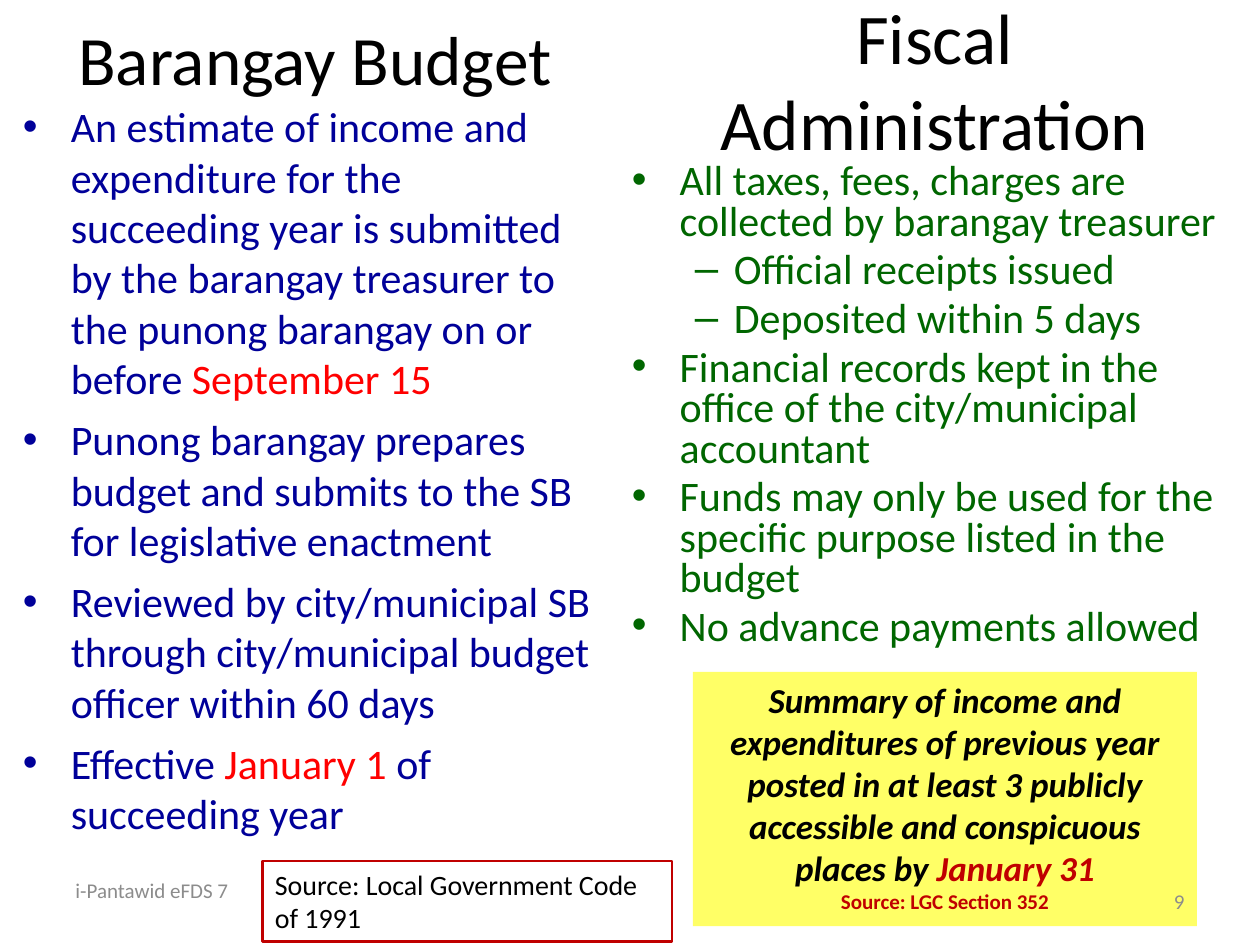
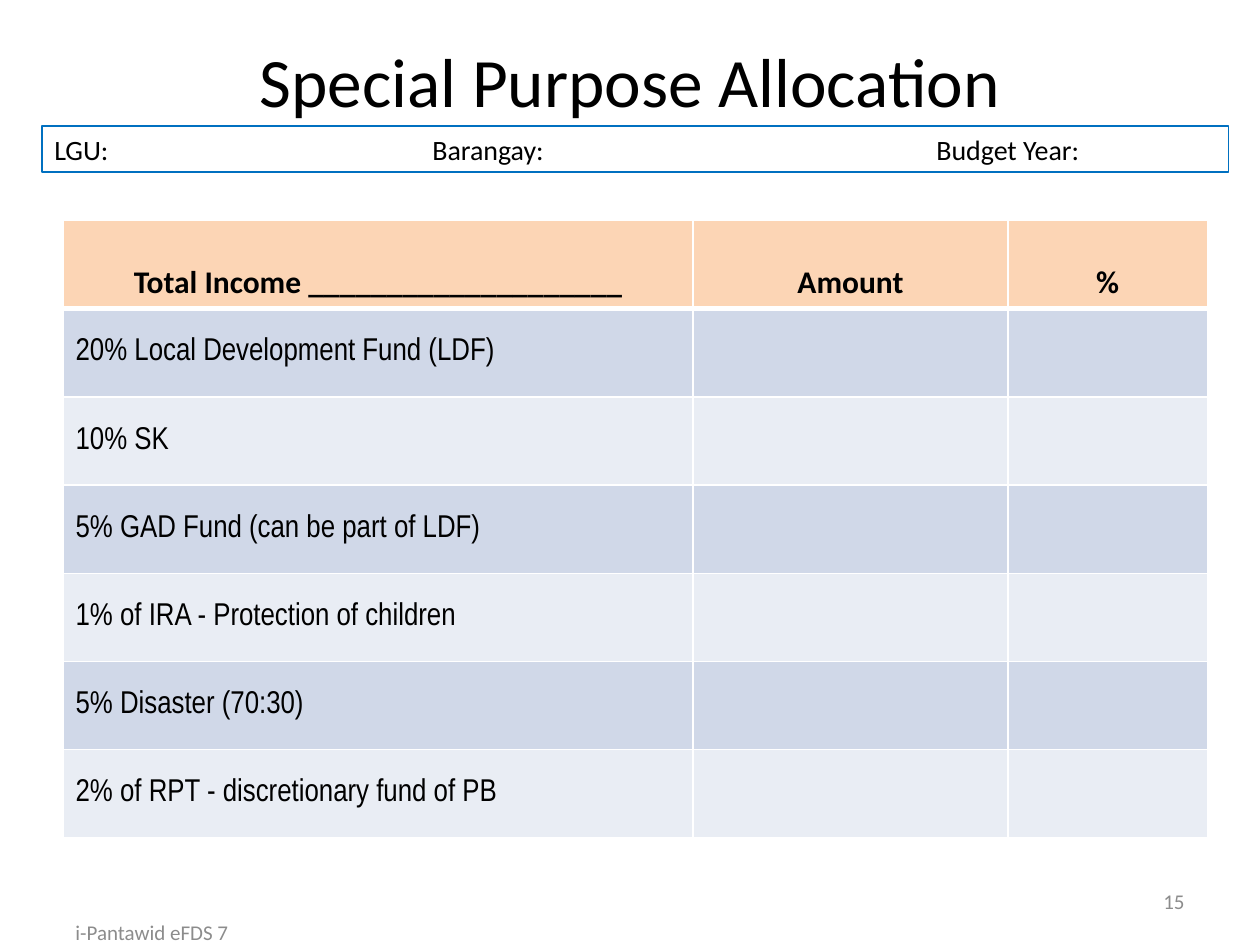
from dataclasses import dataclass
from typing import NamedTuple

from lxml import etree
from pptx import Presentation
from pptx.dml.color import RGBColor
from pptx.enum.shapes import MSO_SHAPE
from pptx.enum.text import MSO_ANCHOR, MSO_AUTO_SIZE, PP_ALIGN
from pptx.oxml.ns import qn
from pptx.util import Emu, Inches, Pt

RECT = MSO_SHAPE.RECTANGLE
TOP, MIDDLE, BOTTOM = MSO_ANCHOR.TOP, MSO_ANCHOR.MIDDLE, MSO_ANCHOR.BOTTOM
LEFT, CENTER, RIGHT = PP_ALIGN.LEFT, PP_ALIGN.CENTER, PP_ALIGN.RIGHT

BLACK = RGBColor(0x00, 0x00, 0x00)
WHITE = RGBColor(0xFF, 0xFF, 0xFF)
GRAY = RGBColor(0x8C, 0x8C, 0x8C)
NAVY = RGBColor(0x00, 0x00, 0x99)
GREEN = RGBColor(0x00, 0x66, 0x00)
RED = RGBColor(0xFF, 0x00, 0x00)
DARK_RED = RGBColor(0xC0, 0x00, 0x00)
BLUE = RGBColor(0x00, 0x70, 0xC0)
YELLOW = RGBColor(0xFF, 0xFF, 0x66)
PEACH = RGBColor(0xFC, 0xD5, 0xB5)
BANDS = (RGBColor(0xD0, 0xD8, 0xE8), RGBColor(0xE9, 0xED, 0xF4))

# The slide is a grid of 120 columns by 90 rows.
SLIDE_W, SLIDE_H = Inches(10), Inches(7.5)
COL, ROW = SLIDE_W // 120, SLIDE_H // 90

BODY_FONT, TABLE_FONT = "Calibri", "Arial Narrow"
TITLE_SIZE = 39.6


class Box(NamedTuple):
    col: float
    row: float
    cols: float
    rows: float

    def emu(self) -> tuple[Emu, ...]:
        return (Emu(round(self.col * COL)), Emu(round(self.row * ROW)),
                Emu(round(self.cols * COL)), Emu(round(self.rows * ROW)))


class Run(NamedTuple):
    text: str
    color: RGBColor = BLACK
    size: float = 24
    bold: bool = False
    italic: bool = False
    font: str = BODY_FONT


class Bullet(NamedTuple):
    char: str
    margin: float
    hang: float


DOT, DASH = Bullet("•", 0.38, 0.38), Bullet("–", 0.81, 0.31)


@dataclass
class Para:
    runs: list[Run]
    align: PP_ALIGN = LEFT
    bullet: Bullet | None = None
    before: float = 0
    spacing: float = 1.0
    tabs: tuple[float, ...] = ()


@dataclass
class Panel:
    box: Box
    paras: list[Para]
    fill: RGBColor | None = None
    line: RGBColor | None = None
    line_width: float = 0


FOOTER_TEXT = "i-Pantawid eFDS 7"
NUMBER_BOX = Box(86, 83.4, 28, 4.8)

BUDGET_STEPS = [
    [Run("An estimate of income and expenditure for the succeeding year is submitted by the "
         "barangay treasurer to the punong barangay on or before ", NAVY),
     Run("September 15", RED)],
    [Run("Punong barangay prepares budget and submits to the SB for legislative enactment", NAVY)],
    [Run("Reviewed by city/municipal SB through city/municipal budget officer within 60 days", NAVY)],
    [Run("Effective ", NAVY), Run("January 1 ", RED), Run("of succeeding year", NAVY)],
]
FISCAL_RULES = [
    (DOT, "All taxes, fees, charges are collected by barangay treasurer"),
    (DASH, "Official receipts issued"),
    (DASH, "Deposited within 5 days"),
    (DOT, "Financial records kept in the office of the city/municipal accountant"),
    (DOT, "Funds may only be used for the specific purpose listed in the budget"),
    (DOT, "No advance payments allowed"),
]
SUMMARY = Panel(Box(66, 64, 48, 24.2), [
    Para([Run("Summary of income and expenditures of previous year posted in at least 3 publicly "
              "accessible and conspicuous places by ", BLACK, 20, True, True),
          Run("January 31", DARK_RED, 20, True, True)], CENTER),
    Para([Run("Source: LGC Section 352", DARK_RED, 12, True)], CENTER),
], fill=YELLOW)
SOURCE = Panel(Box(25, 82, 39, 7.7),
               [Para([Run("Source: Local Government Code of 1991", size=16)])],
               line=DARK_RED, line_width=1.5)
FORM_LINE = Panel(Box(4, 12, 113, 4.4),
                  [Para([Run("LGU:\tBarangay:\tBudget Year:", size=16)], tabs=(3, 7))],
                  line=BLUE, line_width=0.75)

HEADERS = ["Total Income ____________________", "Amount", "%"]
FUNDS = [
    "20% Local Development Fund (LDF)",
    "10% SK",
    "5% GAD Fund (can be part of LDF)",
    "1% of IRA - Protection of children",
    "5% Disaster (70:30)",
    "2% of RPT - discretionary fund of PB",
]
TABLE_COLS = (60, 30, 19)
TABLE_ROW = 8.4


def write(tf, paras: list[Para]) -> None:
    for i, para in enumerate(paras):
        p = tf.paragraphs[0] if i == 0 else tf.add_paragraph()
        formats = {"alignment": para.align, "space_before": Pt(para.before),
                   "line_spacing": para.spacing}
        for name, value in formats.items():
            setattr(p, name, value)
        pPr = p._p.get_or_add_pPr()
        if para.bullet:
            pPr.set("marL", str(Inches(para.bullet.margin)))
            pPr.set("indent", str(-Inches(para.bullet.hang)))
            etree.SubElement(pPr, qn("a:buFont"), typeface="Arial")
            etree.SubElement(pPr, qn("a:buChar"), char=para.bullet.char)
        if para.tabs:
            stops = etree.SubElement(pPr, qn("a:tabLst"))
            for stop in para.tabs:
                etree.SubElement(stops, qn("a:tab"), pos=str(Inches(stop)), algn="l")
        for run in para.runs:
            r = p.add_run()
            r.text = run.text
            fonts = {"name": run.font, "size": Pt(run.size),
                     "bold": run.bold, "italic": run.italic}
            for name, value in fonts.items():
                setattr(r.font, name, value)
            r.font.color.rgb = run.color


def format_frame(tf, anchor: MSO_ANCHOR) -> None:
    formats = {"word_wrap": True, "auto_size": MSO_AUTO_SIZE.NONE, "vertical_anchor": anchor}
    for name, value in formats.items():
        setattr(tf, name, value)


def add_text(slide, box: Box, paras: list[Para], anchor: MSO_ANCHOR = TOP) -> None:
    tf = slide.shapes.add_textbox(*box.emu()).text_frame
    format_frame(tf, anchor)
    write(tf, paras)


def add_titled_slide(prs, title: str, box: Box, anchor: MSO_ANCHOR = MIDDLE):
    slide = prs.slides.add_slide(prs.slide_layouts[5])
    sp = slide.shapes.title
    sp.left, sp.top, sp.width, sp.height = box.emu()
    format_frame(sp.text_frame, anchor)
    write(sp.text_frame, [Para([Run(title, size=TITLE_SIZE)], CENTER)])
    return slide


def add_panel(slide, panel: Panel) -> None:
    sp = slide.shapes.add_shape(RECT, *panel.box.emu())
    sp.shadow.inherit = False
    if panel.fill is None:
        sp.fill.background()
    else:
        sp.fill.solid()
        sp.fill.fore_color.rgb = panel.fill
    if panel.line is None:
        sp.line.fill.background()
    else:
        sp.line.color.rgb = panel.line
        sp.line.width = Pt(panel.line_width)
    format_frame(sp.text_frame, TOP)
    write(sp.text_frame, panel.paras)


def add_footer(slide, number: int, footer_row: float) -> None:
    add_text(slide, Box(6, footer_row, 28, 4.8), [Para([Run(FOOTER_TEXT, GRAY, 12)])], MIDDLE)
    add_text(slide, NUMBER_BOX, [Para([Run(str(number), GRAY, 12)], RIGHT)], MIDDLE)


def style_cell(cell, fill: RGBColor, bottom_width: float, top_width: float) -> None:
    """Give the cell white borders and a solid fill."""
    tcPr = cell._tc.get_or_add_tcPr()
    widths = {"a:lnL": 1, "a:lnR": 1, "a:lnT": top_width, "a:lnB": bottom_width}
    for tag, width in widths.items():
        ln = etree.SubElement(tcPr, qn(tag), w=str(Pt(width)))
        solid = etree.SubElement(ln, qn("a:solidFill"))
        etree.SubElement(solid, qn("a:srgbClr"), val=str(WHITE))
    cell.fill.solid()
    cell.fill.fore_color.rgb = fill


def add_allocation_table(slide) -> None:
    rows = len(FUNDS) + 1
    box = Box(6, 21, sum(TABLE_COLS), rows * TABLE_ROW)
    table = slide.shapes.add_table(rows, len(TABLE_COLS), *box.emu()).table
    for column, cols in zip(table.columns, TABLE_COLS):
        column.width = Emu(cols * COL)
    for row in table.rows:
        row.height = Emu(round(TABLE_ROW * ROW))
    for c, header in enumerate(HEADERS):
        cell = table.cell(0, c)
        cell.vertical_anchor = BOTTOM
        style_cell(cell, PEACH, 3, 1)
        write(cell.text_frame, [Para([Run(header, size=18, bold=True)], CENTER)])
    for i, fund in enumerate(FUNDS):
        for c in range(len(TABLE_COLS)):
            cell = table.cell(i + 1, c)
            cell.vertical_anchor = MIDDLE
            style_cell(cell, BANDS[i % 2], 1, 3 if i == 0 else 1)
        write(table.cell(i + 1, 0).text_frame, [Para([Run(fund, size=18, font=TABLE_FONT)])])


def build_budget_slide(prs) -> None:
    slide = add_titled_slide(prs, "Barangay Budget", Box(6, -2, 48, 15))
    add_text(slide, Box(1, 9, 57, 75),
             [Para(runs, bullet=DOT, before=6) for runs in BUDGET_STEPS])
    add_text(slide, Box(64, 0, 50, 15),
             [Para([Run("Fiscal Administration", size=40.7)], CENTER)], MIDDLE)
    add_text(slide, Box(59, 15, 59, 72.4),
             [Para([Run(text, GREEN)], bullet=bullet, before=4.8, spacing=0.8)
              for bullet, text in FISCAL_RULES])
    add_panel(slide, SUMMARY)
    add_panel(slide, SOURCE)
    add_footer(slide, 9, 82.4)


def build_allocation_slide(prs) -> None:
    slide = add_titled_slide(prs, "Special Purpose Allocation", Box(6, 3.6, 108, 15), TOP)
    slide.shapes.title.text_frame.margin_top = 0
    add_allocation_table(slide)
    add_panel(slide, FORM_LINE)
    add_footer(slide, 15, 86.4)


def main() -> None:
    prs = Presentation()
    prs.slide_width, prs.slide_height = SLIDE_W, SLIDE_H
    build_budget_slide(prs)
    build_allocation_slide(prs)
    prs.save("out.pptx")


if __name__ == "__main__":
    main()
